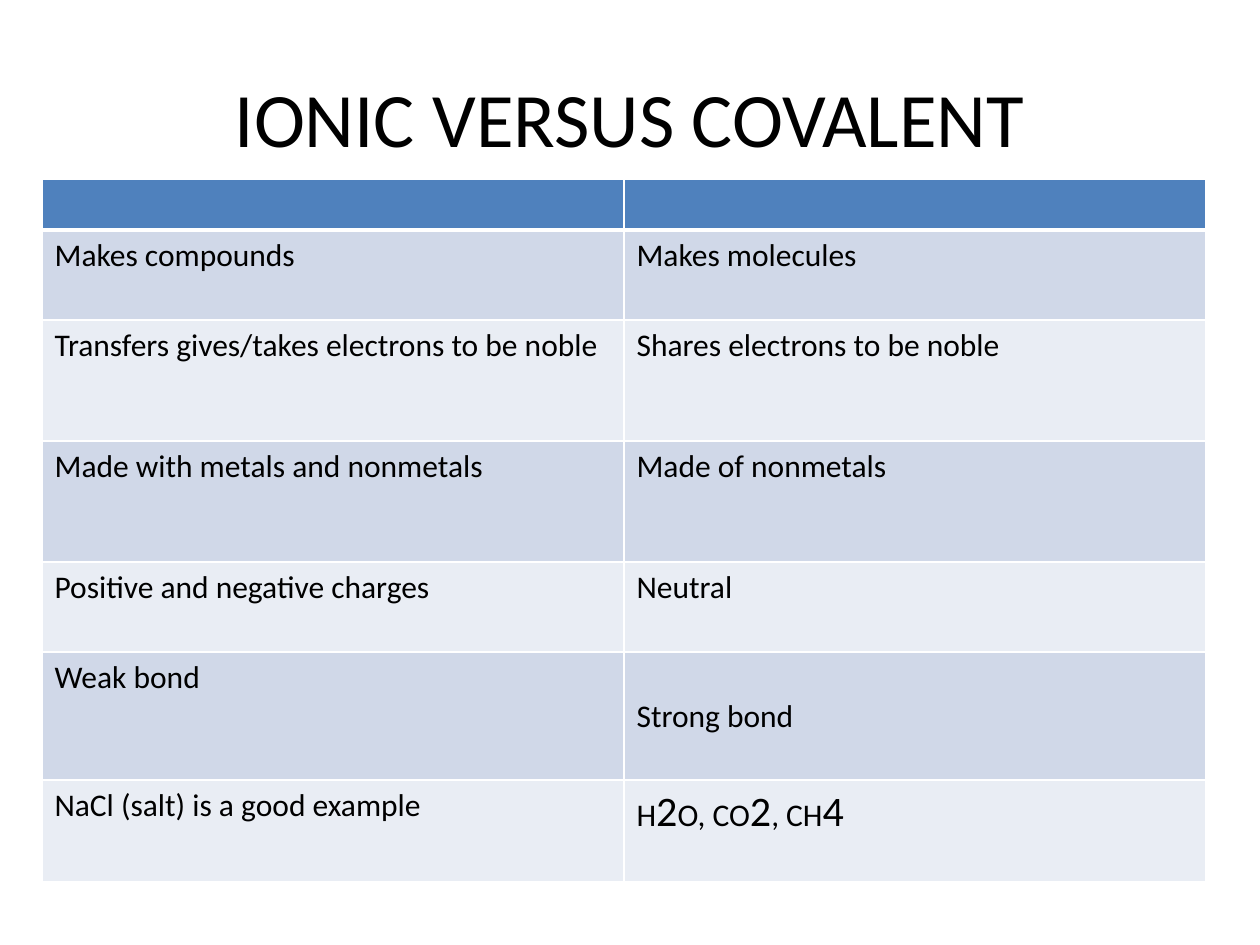
from lxml import etree
from pptx import Presentation
from pptx import util as u
from pptx.dml import color
from pptx.enum import text
from pptx.oxml import ns

PX = 914400 / 126
TITLE_FORMAT = {"size": u.Pt(44), "name": "Calibri", "bold": False}
BODY_FORMAT = {"size": u.Pt(18), "name": "Calibri", "bold": False}
DIGIT_FORMAT = {**BODY_FORMAT, "size": u.Pt(24)}
HEADER, BANDS = "4F81BD", ("E9EDF4", "D0D8E8")
ROW_HEIGHTS = (50, 90, 121, 121, 90, 128, 102)
COMPARISON = (
    ("", ""),
    ("Makes compounds", "Makes molecules"),
    ("Transfers gives/takes electrons to be noble", "Shares electrons to be noble"),
    ("Made with metals and nonmetals", "Made of nonmetals"),
    ("Positive and negative charges", "Neutral"),
    ("Weak bond", "Strong bond"),
    ("NaCl (salt) is a good example", ("H", "2", "O, CO", "2", ", CH", "4")),
)


def px(length):
    """Turn pixels into EMU."""
    return u.Emu(round(length * PX))


def rgb(value):
    """Turn a hex string into a colour."""
    return color.RGBColor.from_string(value)


def apply(target, values):
    """Set each attribute named in values."""
    for name, value in values.items():
        setattr(target, name, value)


def add_run(paragraph, wording, font_format):
    """Append one black run to a paragraph."""
    run = paragraph.add_run()
    run.text = wording
    apply(run.font, font_format)
    run.font.color.rgb = rgb("000000")


def add_title(slide, wording):
    """Place and format the slide title."""
    title = slide.shapes.title
    apply(title, {"left": px(63), "top": px(38), "width": px(1134), "height": px(158)})
    title.text_frame.vertical_anchor = text.MSO_ANCHOR.MIDDLE
    heading = title.text_frame.paragraphs[0]
    heading.alignment = text.PP_ALIGN.CENTER
    add_run(heading, wording, TITLE_FORMAT)


def add_borders(cell, widths):
    """Draw white borders of the given point widths on a cell."""
    properties = cell._tc.get_or_add_tcPr()
    for side, width in widths.items():
        line = etree.SubElement(properties, ns.qn(f"a:ln{side}"), w=str(u.Pt(width)))
        fill = etree.SubElement(line, ns.qn("a:solidFill"))
        etree.SubElement(fill, ns.qn("a:srgbClr"), val="FFFFFF")


def fill_cell(cell, content, fill, widths):
    """Give a cell its borders, fill and runs."""
    add_borders(cell, widths)
    cell.fill.solid()
    cell.fill.fore_color.rgb = rgb(fill)
    paragraph = cell.text_frame.paragraphs[0]
    pieces = (content,) if isinstance(content, str) else content
    for piece in filter(None, pieces):
        add_run(paragraph, piece, DIGIT_FORMAT if piece.isdigit() else BODY_FORMAT)


def add_comparison(slide):
    """Add the two-column table of bond properties."""
    frame = slide.shapes.add_table(
        len(COMPARISON), 2, px(42), px(179), px(1165), px(sum(ROW_HEIGHTS)))
    table = frame.table
    for column in table.columns:
        column.width = px(582)
    for index, (contents, height) in enumerate(zip(COMPARISON, ROW_HEIGHTS)):
        table.rows[index].height = px(height)
        fill = BANDS[index % 2] if index else HEADER
        widths = {"L": 1, "R": 1, "T": 3 if index == 1 else 1, "B": 1 if index else 3}
        for column, content in enumerate(contents):
            fill_cell(table.cell(index, column), content, fill, widths)
    table.cell(5, 1).margin_top = px(45)


def main():
    """Build and save the slide."""
    deck = Presentation()
    apply(deck, {"slide_width": px(1260), "slide_height": px(945)})
    slide = deck.slides.add_slide(deck.slide_layouts[5])
    add_title(slide, "IONIC VERSUS COVALENT")
    add_comparison(slide)
    deck.save("out.pptx")


if __name__ == "__main__":
    main()
